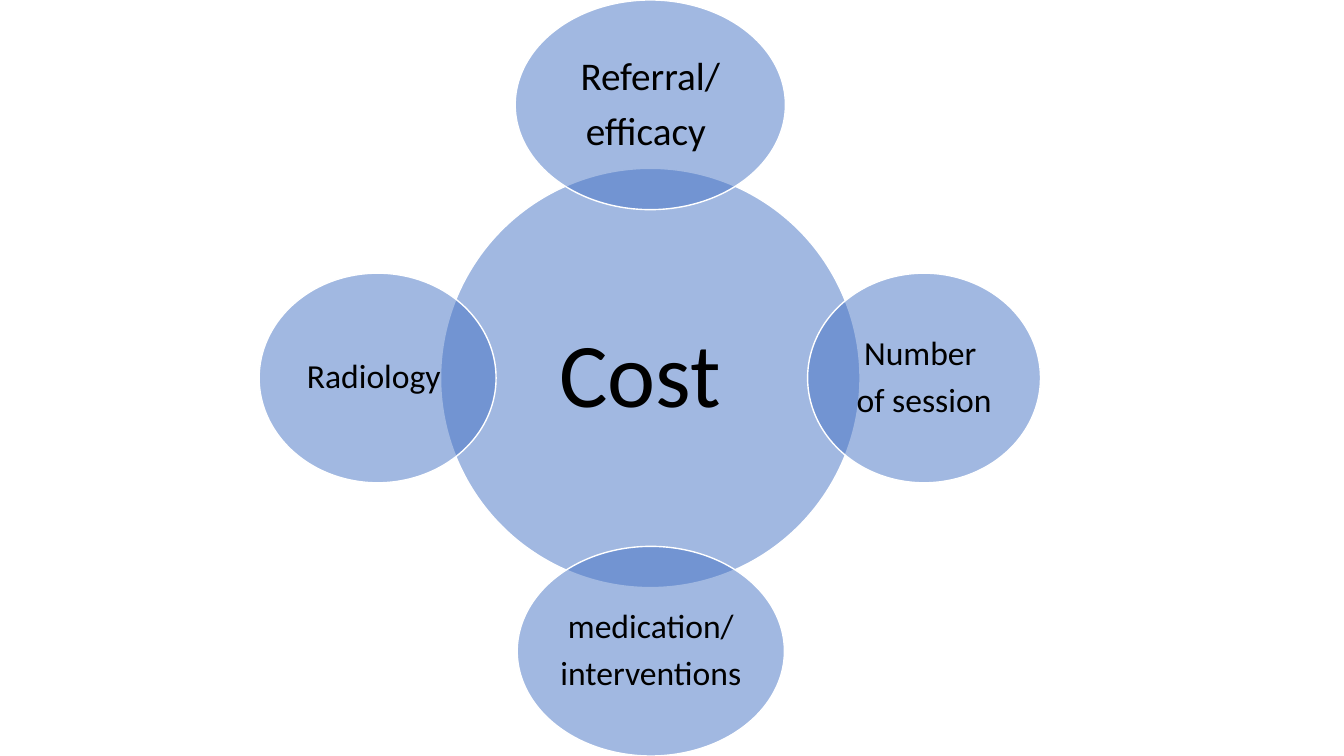
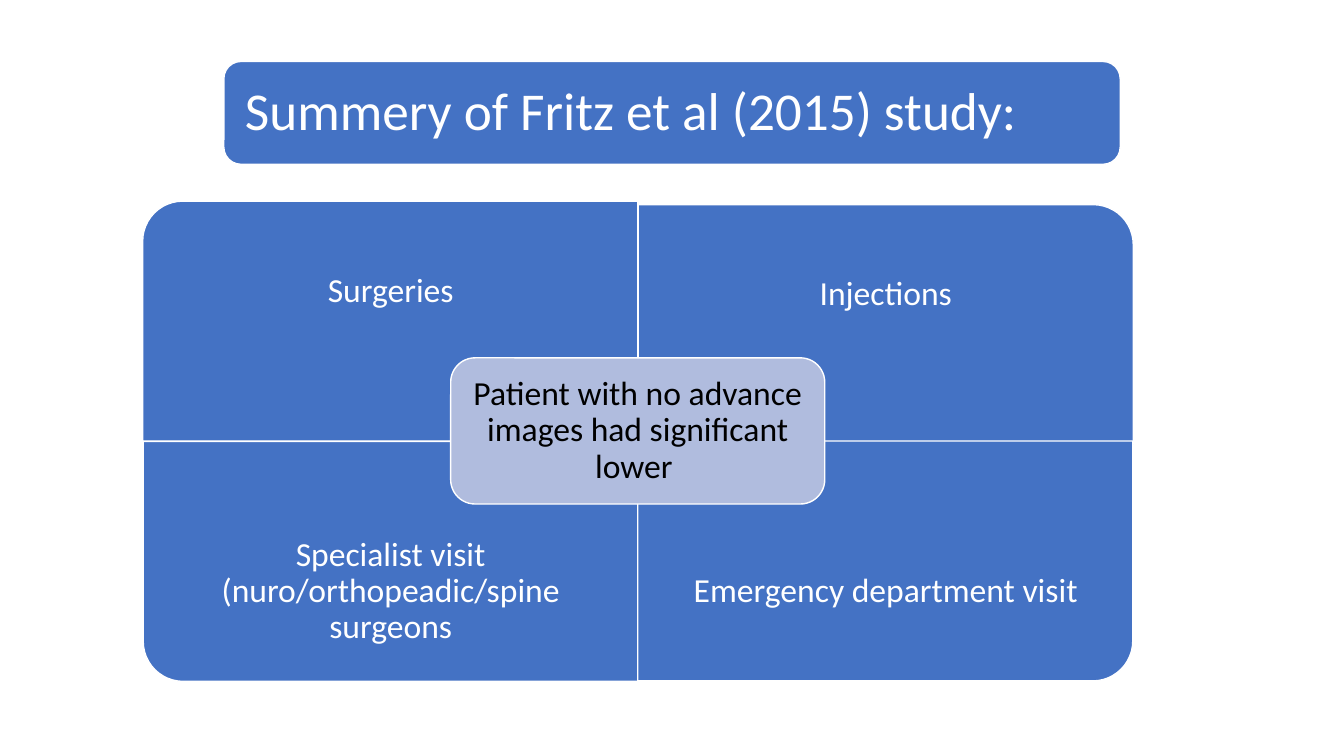
from lxml import etree
from pptx import Presentation, util as u
from pptx.dml.color import RGBColor
from pptx.enum import shapes, text
from pptx.oxml.ns import qn

PX = 9144
FONT = "Calibri"
BLUE = RGBColor(0x44, 0x72, 0xC4)
PALE_BLUE = RGBColor(0xB0, 0xBC, 0xDE)
WHITE = RGBColor(0xFF, 0xFF, 0xFF)
BLACK = RGBColor(0, 0, 0)
CENTER = text.PP_ALIGN.CENTER
LEFT = text.PP_ALIGN.LEFT


def add_panel(slide, kind, left, top, width, height, fill=BLUE):
    panel = slide.shapes.add_shape(kind, left * PX, top * PX, width * PX, height * PX)
    panel.shadow.inherit = False
    panel.fill.solid()
    panel.fill.fore_color.rgb = fill
    panel.line.color.rgb = WHITE
    panel.line.width = u.Pt(1)
    return panel


def write(holder, words, size, color, inset, align=CENTER):
    frame = holder.text_frame
    frame.word_wrap = True
    frame.vertical_anchor = text.MSO_ANCHOR.MIDDLE
    frame.margin_left = frame.margin_right = inset * PX
    frame.margin_top = frame.margin_bottom = inset * PX
    frame.text = words
    for paragraph in frame.paragraphs:
        paragraph.alignment = align
        paragraph.line_spacing = 0.9
        paragraph.space_after = u.Pt(round(size * 0.33))
        for run in paragraph.runs:
            run.font.name = FONT
            run.font.size = u.Pt(size)
            run.font.color.rgb = color


deck = Presentation()
deck.slide_width = 1333 * PX
deck.slide_height = 750 * PX
blank = deck.slide_layouts[6]

cost_slide = deck.slides.add_slide(blank)
HUB_X, HUB_Y, REACH = 645, 375, 271
factors = [
    ("Cost ", 0, 0, 416, 416, 65, 9),
    ("Referral/\nefficacy ", 0, -1, 268, 208, 28, 4),
    ("Number \nof session", 1, 0, 231, 208, 24, 3),
    ("medication/\ninterventions", 0, 1, 265, 208, 24, 3),
    ("Radiology ", -1, 0, 235, 208, 24, 3),
]
for words, across, down, width, height, size, inset in factors:
    left = HUB_X + across * REACH - width // 2
    top = HUB_Y + down * REACH - height // 2
    circle = add_panel(cost_slide, shapes.MSO_SHAPE.OVAL, left, top, width, height)
    tint = circle.fill._xPr.find(qn("a:solidFill"))[0]
    etree.SubElement(tint, qn("a:alpha")).set("val", "50000")
    write(circle, words, size, BLACK, inset)

study_slide = deck.slides.add_slide(blank)
QUAD_W, QUAD_H, LABEL_H = 491, 238, 178
LEFT_X, RIGHT_X, LOWER_Y = 142, 633, 438
findings = [
    ("Surgeries", LEFT_X, 200, 270),
    ("Injections", RIGHT_X, 203, 0),
    ("Specialist visit (nuro/orthopeadic/spine surgeons", LEFT_X, LOWER_Y, 180),
    ("Emergency department visit", RIGHT_X, LOWER_Y, 90),
]
for words, left, top, turn in findings:
    width, height = (QUAD_H, QUAD_W) if turn % 180 else (QUAD_W, QUAD_H)
    quadrant = add_panel(study_slide, shapes.MSO_SHAPE.ROUND_1_RECTANGLE,
                         left + (QUAD_W - width) // 2, top + (QUAD_H - height) // 2,
                         width, height)
    quadrant.rotation = turn
    label_top = top + QUAD_H - LABEL_H if top == LOWER_Y else top
    label = study_slide.shapes.add_textbox(left * PX, label_top * PX, QUAD_W * PX, LABEL_H * PX)
    write(label, words, 24, WHITE, 19)

conclusion = add_panel(study_slide, shapes.MSO_SHAPE.ROUNDED_RECTANGLE,
                       447, 355, 371, 145, PALE_BLUE)
write(conclusion, "Patient with no advance images had significant lower ", 24, BLACK, 10)

heading = add_panel(study_slide, shapes.MSO_SHAPE.ROUNDED_RECTANGLE, 222, 61, 889, 102)
write(heading, "Summery of Fritz et al (2015) study:", 38, WHITE, 16, LEFT)

deck.save("out.pptx")
